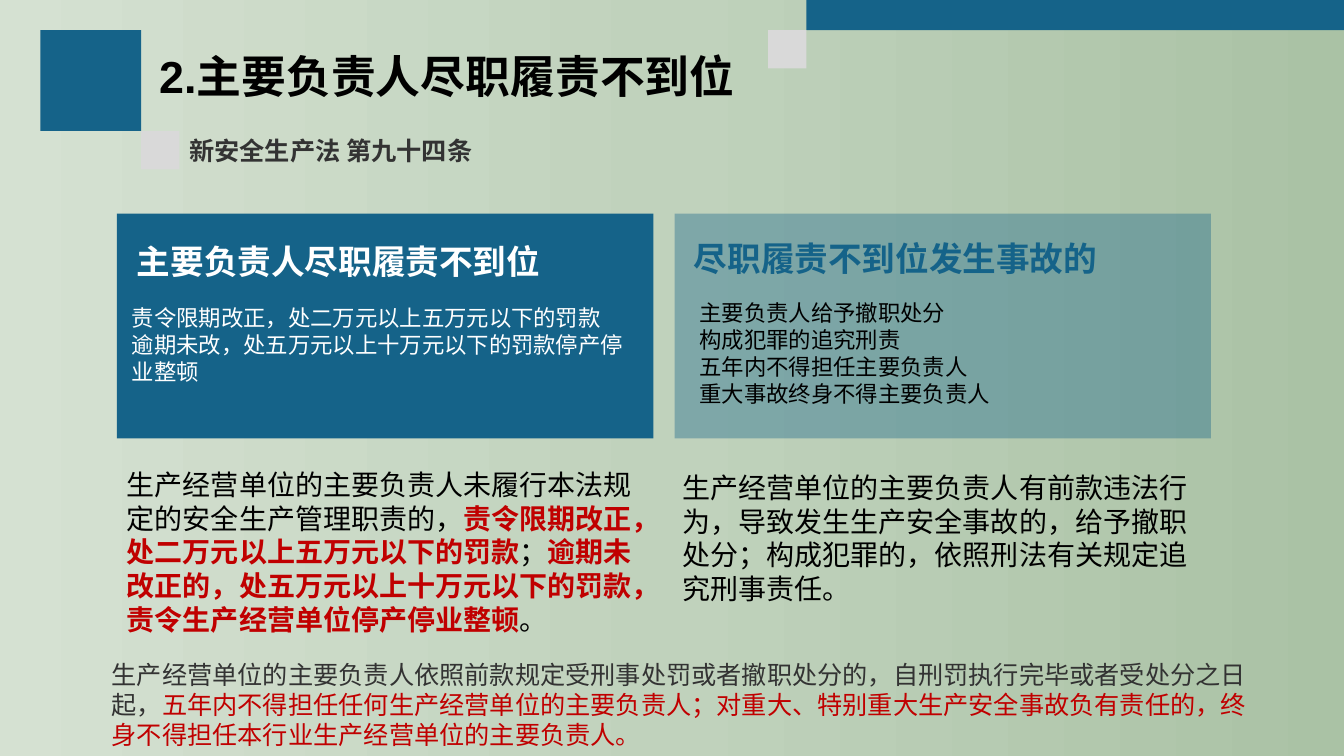
import copy
from dataclasses import dataclass

import pptx
import pptx.dml.color
import pptx.enum.shapes
import pptx.enum.text
import pptx.oxml.ns
import pptx.util
from lxml import etree

Inches = pptx.util.Inches
ALIGN = pptx.enum.text.PP_ALIGN
ANCHOR = pptx.enum.text.MSO_ANCHOR


@dataclass(frozen=True)
class Theme:
    blue: str = "156389"
    gray: str = "D9D9D9"
    white: str = "FFFFFF"
    black: str = "000000"
    dark: str = "333333"
    red: str = "C00000"
    gradient: tuple = ((0, "D5E1D2"), (0.5, "C0D2BC"), (1, "AAC2A5"))
    latin: str = "Arial"
    chinese: str = "Noto Sans CJK SC"
    title: int = 32
    heading: int = 24
    body: int = 20
    note: int = 18
    point: int = 16


THEME = Theme()


def rgb(value):
    return pptx.dml.color.RGBColor.from_string(value)


def paint_background(slide):
    fill = slide.background.fill
    fill.gradient()
    fill.gradient_angle = 0
    first = fill._fill._gradFill.gsLst[0]
    first.addnext(copy.deepcopy(first))
    for stop, (position, color) in zip(fill.gradient_stops, THEME.gradient):
        stop.position = position
        stop.color.rgb = rgb(color)


def add_block(slide, box, color, opacity=100):
    block = slide.shapes.add_shape(
        pptx.enum.shapes.MSO_SHAPE.RECTANGLE, *map(Inches, box))
    block.shadow.inherit = False
    block.fill.solid()
    block.fill.fore_color.rgb = rgb(color)
    block.line.fill.background()
    if opacity < 100:
        tint = block.fill._xPr.find(".//" + pptx.oxml.ns.qn("a:srgbClr"))
        etree.SubElement(tint, pptx.oxml.ns.qn("a:alpha"), val=str(opacity * 1000))


def add_text(slide, box, paragraphs, size, font=THEME.latin,
             anchor=ANCHOR.TOP, align=ALIGN.LEFT):
    frame = slide.shapes.add_textbox(*map(Inches, box)).text_frame
    frame.word_wrap = True
    frame.vertical_anchor = anchor
    for index, pieces in enumerate(paragraphs):
        paragraph = frame.paragraphs[0] if index == 0 else frame.add_paragraph()
        paragraph.alignment = align
        for words, color, bold in pieces:
            run = paragraph.add_run()
            run.text = words
            formats = {"name": font, "size": pptx.util.Pt(size), "bold": bold}
            for attribute, value in formats.items():
                setattr(run.font, attribute, value)
            run.font.color.rgb = rgb(color)
            etree.SubElement(run.font._rPr, pptx.oxml.ns.qn("a:ea"),
                             typeface=THEME.chinese)


def add_header(slide, box):
    left, top, width, height = box
    badge, accent = 1, 0.38
    banner = width * 0.4
    add_block(slide, (left + 0.4, top + height, badge, badge), THEME.blue)
    add_block(slide, (left + 0.4 + badge, top + height + badge, accent, accent),
              THEME.gray)
    add_block(slide, (left + width - banner, top, banner, height), THEME.blue)
    add_block(slide, (left + width - banner - accent, top + height, accent, accent),
              THEME.gray)
    add_text(slide, (left + 1.48, top + 0.43, 7.09, 0.64),
             [[("2.主要负责人尽职履责不到位", THEME.black, True)]], THEME.title)
    add_text(slide, (left + 1.78, top + 1.29, 4.43, 0.4),
             [[("新安全生产法 第九十四条", THEME.dark, True)]],
             THEME.note, THEME.chinese)


def add_duty_card(slide, box):
    left, top, width, height = box
    add_block(slide, box, THEME.blue)
    add_text(slide, (left + 0.1, top + 0.02, 6.34, 0.89),
             [[("主要负责人尽职履责不到位", THEME.white, True)]],
             THEME.heading, anchor=ANCHOR.MIDDLE)
    penalties = ["责令限期改正，处二万元以上五万元以下的罚款",
                 "逾期未改，处五万元以上十万元以下的罚款停产停业整顿"]
    add_text(slide, (left + 0.05, top + 0.85, 5.22, 1.18),
             [[(penalty, THEME.white, False)] for penalty in penalties], THEME.point)
    add_text(slide, (left, top + height + 0.24, width, 1.78), [[
        ("生产经营单位的主要负责人未履行本法规定的安全生产管理职责的，", THEME.black, False),
        ("责令限期改正，处二万元以上五万元以下的罚款", THEME.red, True),
        ("；", THEME.black, False),
        ("逾期未改正的，处五万元以上十万元以下的罚款，责令生产经营单位停产停业整顿",
         THEME.red, True),
        ("。", THEME.black, False)]], THEME.body)


def add_accident_card(slide, box):
    left, top, width, height = box
    add_block(slide, box, THEME.blue, opacity=38)
    add_text(slide, (left + 0.15, top + 0.72, 5.29, 1.32),
             [[(consequence, THEME.black, False)] for consequence in (
                 "主要负责人给予撤职处分", "构成犯罪的追究刑责",
                 "五年内不得担任主要负责人", "重大事故终身不得主要负责人")],
             THEME.point, anchor=ANCHOR.MIDDLE)
    add_text(slide, (left - 0.32, top + 0.19, 4.61, 0.5),
             [[("尽职履责不到位发生事故的", THEME.blue, True)]],
             THEME.heading, align=ALIGN.RIGHT)
    add_text(slide, (left - 0.02, top + height + 0.27, width, 1.45), [[
        ("生产经营单位的主要负责人有前款违法行为，导致发生生产安全事故的，给予撤职处分；"
         "构成犯罪的，依照刑法有关规定追究刑事责任。", THEME.black, False)]], THEME.body)


def add_ban_note(slide, box):
    add_text(slide, box, [[
        ("生产经营单位的主要负责人依照前款规定受刑事处罚或者撤职处分的，"
         "自刑罚执行完毕或者受处分之日起，", THEME.dark, False),
        ("五年内不得担任任何生产经营单位的主要负责人；对重大、特别重大生产安全事故负有责任的，"
         "终身不得担任本行业生产经营单位的主要负责人。", THEME.red, False)]],
        THEME.note, THEME.chinese)


def main():
    deck = pptx.Presentation()
    deck.slide_width, deck.slide_height = Inches(13.33), Inches(7.5)
    slide = deck.slides.add_slide(deck.slide_layouts[6])
    paint_background(slide)
    add_header(slide, (0, 0, 13.33, 0.3))
    card_width, card_height, gap = 5.32, 2.23, 0.21
    for column, add_card in enumerate((add_duty_card, add_accident_card)):
        add_card(slide, (1.16 + column * (card_width + gap), 2.12,
                         card_width, card_height))
    add_ban_note(slide, (1.01, 6.49, 11.49, 1.01))
    deck.save("out.pptx")


if __name__ == "__main__":
    main()
